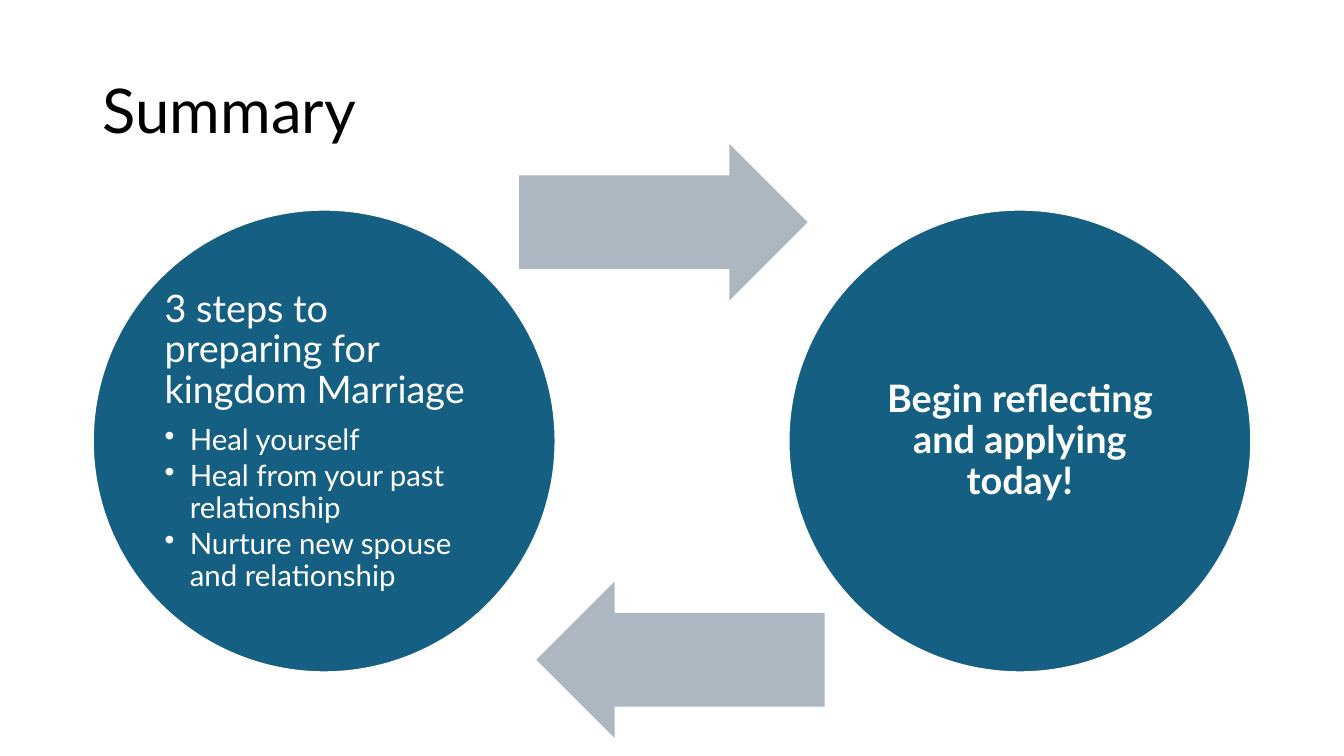
from pptx import Presentation
from pptx.dml.color import RGBColor
from pptx.enum.shapes import MSO_SHAPE as Shape
from pptx.enum.text import MSO_ANCHOR as Anchor, PP_ALIGN as Align
from pptx.oxml import parse_xml
from pptx.oxml.ns import nsdecls
from pptx.util import Inches, Pt

TITLE = "Summary"
STEPS_HEADING = "3 steps to preparing for kingdom Marriage"
STEPS = [
    "Heal yourself",
    "Heal from your past relationship",
    "Nurture new spouse and relationship",
]
CALL_TO_ACTION = "Begin reflecting and applying today!"

FONT = "Lato"
COLORS = {"title": "000000", "circle": "156082", "arrow": "ACB7C1", "white": "FFFFFF"}
TITLE_SIZE, HEADING_SIZE, STEP_SIZE = 44, 27, 21

MARGIN = 0.92
CIRCLE_TOP, DIAMETER = 2.08, 4.59
CIRCLE_LEFTS = (MARGIN, 7.82)
ARROW_SIZE = (2.86, 1.55)
ARROWS = [(5.15, 1.43, 0), (5.32, 5.77, 180)]  # left, top, rotation
BULLET_INDENT = Inches(0.25)


def color(name):
    return RGBColor.from_string(COLORS[name])


def add_filled(kind, left, top, width, height, fill):
    shape = slide.shapes.add_shape(
        kind, Inches(left), Inches(top), Inches(width), Inches(height))
    shape.shadow.inherit = False
    shape.fill.solid()
    shape.fill.fore_color.rgb = color(fill)
    return shape


def format_paragraph(paragraph, size, tint="white", bold=False, align=Align.LEFT, after=0):
    """Style a paragraph; after is the gap below as a share of the text size."""
    paragraph.alignment = align
    paragraph.line_spacing = 0.9
    paragraph.space_after = Pt(size * after)
    for run in paragraph.runs:
        run.font.name = FONT
        run.font.size = Pt(size)
        run.font.bold = bold
        run.font.color.rgb = color(tint)


def add_bullet(paragraph):
    properties = paragraph._p.get_or_add_pPr()
    properties.set("marL", str(BULLET_INDENT))
    properties.set("indent", str(-BULLET_INDENT))
    properties.append(parse_xml(f'<a:buChar {nsdecls("a")} char="•"/>'))


def add_circle(left, heading, **heading_format):
    circle = add_filled(Shape.OVAL, left, CIRCLE_TOP, DIAMETER, DIAMETER, "circle")
    circle.line.color.rgb = color("white")
    circle.line.width = Pt(1.5)
    frame = circle.text_frame
    frame.word_wrap = True
    frame.vertical_anchor = Anchor.MIDDLE
    frame.margin_left = frame.margin_right = Inches(0.04)
    frame.margin_top = frame.margin_bottom = Inches(0.04)
    frame.text = heading
    format_paragraph(frame.paragraphs[0], HEADING_SIZE, after=0.35, **heading_format)
    return frame


prs = Presentation()
prs.slide_width, prs.slide_height = Inches(13.33), Inches(7.5)
slide = prs.slides.add_slide(prs.slide_layouts[6])

title = slide.shapes.add_textbox(
    Inches(MARGIN), Inches(0.4), Inches(11.5), Inches(1.45)).text_frame
title.word_wrap = True
title.vertical_anchor = Anchor.MIDDLE
title.text = TITLE
format_paragraph(title.paragraphs[0], TITLE_SIZE, "title")

steps_frame = add_circle(CIRCLE_LEFTS[0], STEPS_HEADING)
for step in STEPS:
    step_line = steps_frame.add_paragraph()
    step_line.text = step
    step_line.level = 1
    format_paragraph(step_line, STEP_SIZE, after=0.15)
    add_bullet(step_line)

add_circle(CIRCLE_LEFTS[1], CALL_TO_ACTION, bold=True, align=Align.CENTER)

for left, top, rotation in ARROWS:
    arrow = add_filled(Shape.RIGHT_ARROW, left, top, *ARROW_SIZE, "arrow")
    arrow.line.fill.background()
    arrow.rotation = rotation
    arrow.adjustments[0], arrow.adjustments[1] = 0.6, 0.5

prs.save("out.pptx")
